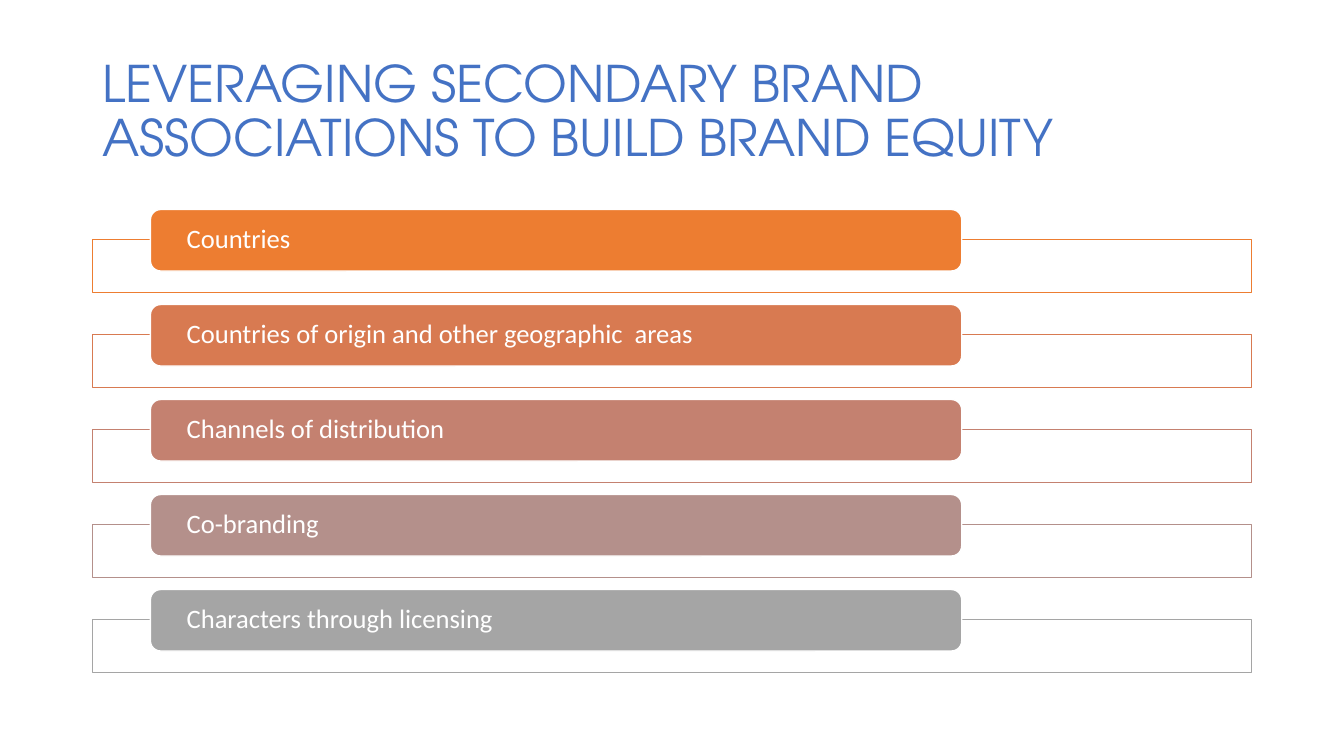
from pptx import Presentation
from pptx.dml.color import RGBColor
from pptx.enum.shapes import MSO_SHAPE as Preset
from pptx.enum.text import MSO_ANCHOR as Anchor, PP_ALIGN as Align
from pptx.oxml.ns import qn
from pptx.util import Cm, Pt
from lxml.etree import SubElement

WHITE = RGBColor(0xFF, 0xFF, 0xFF)
TITLE_BLUE = RGBColor(0x44, 0x72, 0xC4)
ORANGE = RGBColor(0xED, 0x7D, 0x31)
COPPER = RGBColor(0xD8, 0x7A, 0x51)
ROSE = RGBColor(0xC4, 0x81, 0x70)
MAUVE = RGBColor(0xB4, 0x90, 0x8B)
GREY = RGBColor(0xA5, 0xA5, 0xA5)

TITLE = "LEVERAGING SECONDARY BRAND ASSOCIATIONS TO BUILD BRAND EQUITY"
SOURCES = [
    ("Countries", ORANGE),
    ("Countries of origin and other geographic  areas", COPPER),
    ("Channels of distribution", ROSE),
    ("Co-branding", MAUVE),
    ("Characters through licensing", GREY),
]
TITLE_FONT = {"name": "TeX Gyre Adventor", "size": Pt(36)}
LABEL_FONT = {"name": "Calibri", "size": Pt(19)}
LABEL_FRAME = {
    "word_wrap": True, "vertical_anchor": Anchor.MIDDLE,
    "margin_left": Cm(0.84), "margin_right": Cm(0.84),
    "margin_top": 0, "margin_bottom": 0,
}
TITLE_FRAME = {"word_wrap": True, "vertical_anchor": Anchor.MIDDLE}


def apply_format(target, values):
    for attribute, value in values.items():
        setattr(target, attribute, value)


def write_text(shape, text, frame_format, font_format, color):
    frame = shape.text_frame
    apply_format(frame, frame_format)
    paragraph = frame.paragraphs[0]
    paragraph.text = text
    apply_format(paragraph, {"alignment": Align.LEFT, "line_spacing": 0.9})
    apply_format(paragraph.font, font_format)
    paragraph.font.color.rgb = color


def add_box(slide, preset, box, fill, outline):
    shape = slide.shapes.add_shape(preset, *box)
    shape.shadow.inherit = False
    shape.fill.solid()
    shape.fill.fore_color.rgb = fill
    shape.line.color.rgb = outline
    shape.line.width = Pt(1)
    return shape


def add_title(slide, left, top, width, height):
    title = slide.shapes.add_textbox(left, top, width, height)
    write_text(title, TITLE, TITLE_FRAME, TITLE_FONT, TITLE_BLUE)


def add_source_row(slide, left, top, width, label, color):
    """Place a rounded label over the upper edge of an outlined frame."""
    frame_box = (left, top + Cm(0.76), width, Cm(1.33))
    frame = add_box(slide, Preset.RECTANGLE, frame_box, WHITE, color)
    white_fill = frame.fill._xPr.find(qn("a:solidFill"))[0]
    SubElement(white_fill, qn("a:alpha"), val="90000")

    pill_box = (left + Cm(1.46), top, int(width * 0.7), Cm(1.55))
    pill = add_box(slide, Preset.ROUNDED_RECTANGLE, pill_box, color, WHITE)
    write_text(pill, label, LABEL_FRAME, LABEL_FONT, WHITE)


def add_source_list(slide, left, top, width, height):
    pitch = height / len(SOURCES)
    for index, (label, color) in enumerate(SOURCES):
        row_top = int(top + index * pitch)
        add_source_row(slide, left, row_top, width, label, color)


def main():
    deck = Presentation()
    deck.slide_width, deck.slide_height = Cm(33.87), Cm(19.05)
    slide = deck.slides.add_slide(deck.slide_layouts[6])
    left, width = Cm(2.33), Cm(29.21)
    add_title(slide, left, Cm(1.01), width, Cm(3.68))
    add_source_list(slide, left, Cm(5.28), width, Cm(11.97))
    deck.save("out.pptx")


if __name__ == "__main__":
    main()
